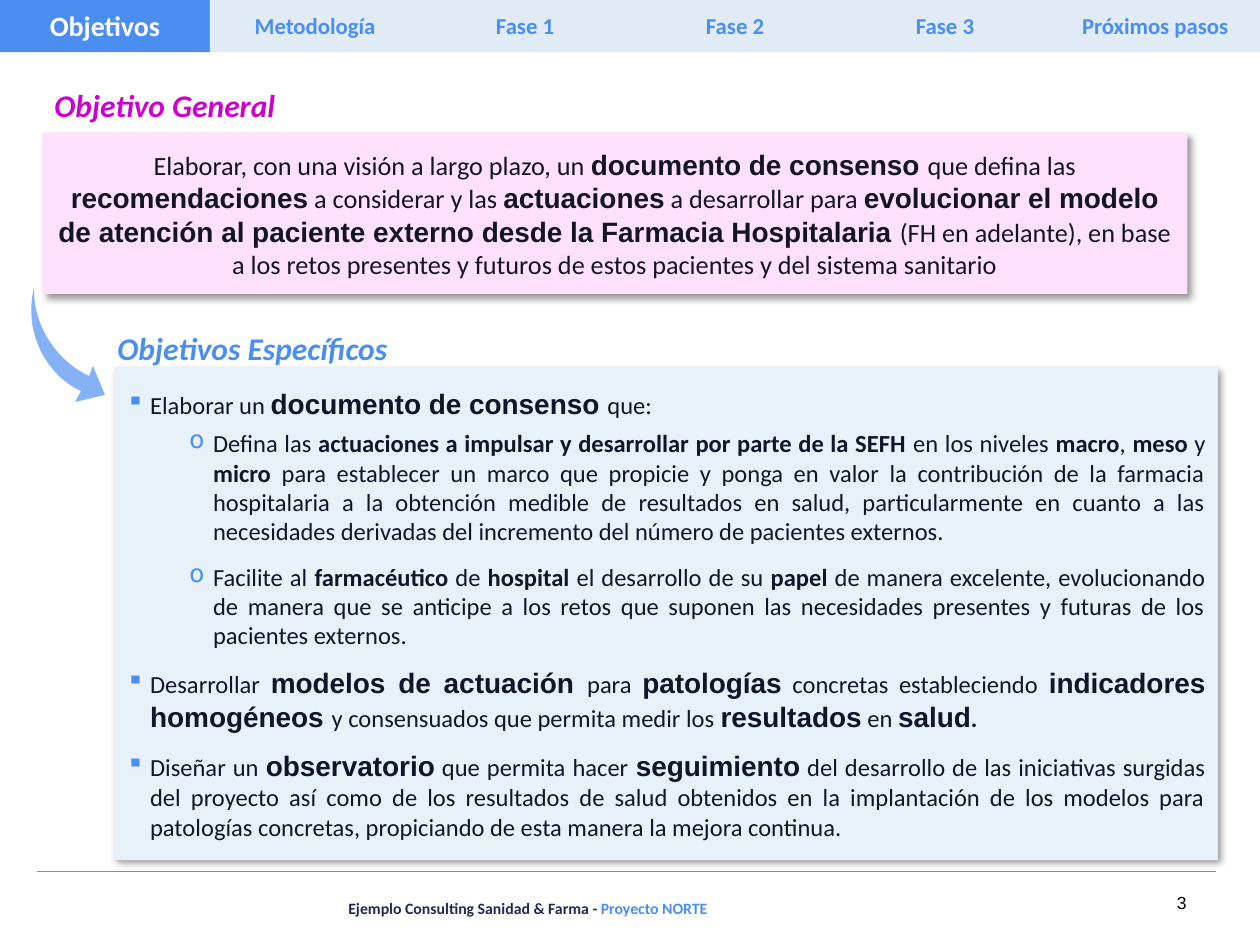
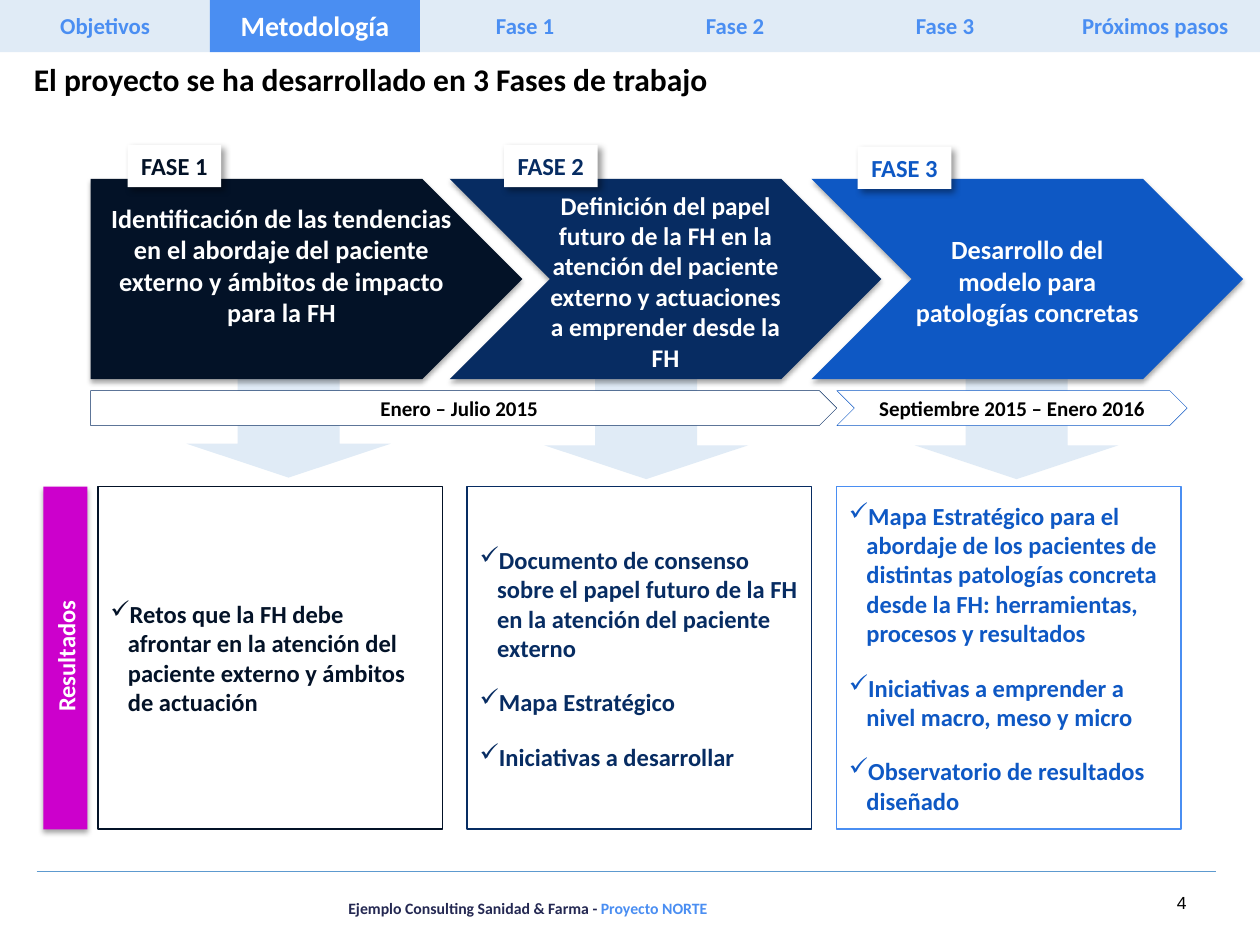
from dataclasses import dataclass

from lxml import etree
from pptx import Presentation
from pptx import util as u
from pptx.dml.color import RGBColor
from pptx.enum import shapes, text
from pptx.oxml import ns

Pt = u.Pt
Kind = shapes.MSO_SHAPE
Align = text.PP_ALIGN
Anchor = text.MSO_ANCHOR

BLUE, PALE, PINK = "4A8EF2", "E0EBF6", "CC00CC"
WHITE, BLACK, INK = "FFFFFF", "000000", "121429"
NIGHT, NAVY, ROYAL = "031227", "072C62", "0E58C4"
TABS = ("Objetivos", "Metodología", "Fase 1", "Fase 2", "Fase 3", "Próximos pasos")
INSET = (7.2, 3.6, 7.2, 3.6)


@dataclass(frozen=True)
class Shade:
    alpha: int
    blur: float
    dist: float
    angle: int


CAST = Shade(40, 4, 3, 45)
DROP = Shade(35, 3.1, 1.8, 90)


@dataclass(frozen=True)
class Para:
    text: str
    bullet: str = ""
    tint: str = ""
    left: float = 0
    hang: float = 0
    before: float = 0
    after: float = 0
    level: int = 0


@dataclass(frozen=True)
class Box:
    at: tuple[float, float, float, float]
    paras: tuple[Para, ...] = ()
    kind: Kind | None = None
    fill: str = ""
    line: str = ""
    width: float = 1
    shade: Shade | None = None
    size: float = 14
    ink: str = INK
    bold: bool = True
    italic: bool = False
    face: str = "Calibri"
    align: Align = Align.LEFT
    anchor: Anchor = Anchor.MIDDLE
    inset: tuple[float, float, float, float] = INSET
    wrap: bool = True
    turn: float = 0
    adjust: tuple[float, ...] = ()


def rgb(code: str) -> RGBColor:
    return RGBColor.from_string(code)


def node(parent, tag: str, **attrs):
    child = etree.SubElement(parent, ns.qn(tag))
    for key, value in attrs.items():
        child.set(key, str(value))
    return child


def cast(shape, shade: Shade) -> None:
    effects = shape.element.spPr.find(ns.qn("a:effectLst"))
    outer = node(effects, "a:outerShdw", blurRad=int(Pt(shade.blur)), dist=int(Pt(shade.dist)),
                 dir=shade.angle * 60000, algn="ctr", rotWithShape=0)
    color = node(outer, "a:srgbClr", val=BLACK)
    node(color, "a:alpha", val=shade.alpha * 1000)


def mark(line, para: Para) -> None:
    props = line._p.get_or_add_pPr()
    props.set("marL", str(int(Pt(para.left))))
    props.set("indent", str(int(Pt(-para.hang))))
    if para.tint:
        node(node(props, "a:buClr"), "a:srgbClr", val=para.tint)
    node(props, "a:buChar", char=para.bullet)


def write(line, para: Para, box: Box) -> None:
    if para.bullet:
        mark(line, para)
    line.level, line.alignment = para.level, box.align
    line.space_before, line.space_after = Pt(para.before), Pt(para.after)
    for part in para.text.split("|"):
        run = line.add_run()
        run.text = part.lstrip("*_")
        big, strong = part.startswith("*"), part.startswith("_")
        font = run.font
        font.name = "Arial" if big else box.face
        font.size = Pt(16 if big else box.size)
        font.bold = big or strong or box.bold
        font.italic = box.italic
        font.color.rgb = rgb(box.ink)


def paint(shape, box: Box) -> None:
    shape.shadow.inherit = False
    shape.fill.solid()
    shape.fill.fore_color.rgb = rgb(box.fill)
    if box.line:
        shape.line.color.rgb = rgb(box.line)
        shape.line.width = Pt(box.width)
    else:
        shape.line.fill.background()
    if box.shade:
        cast(shape, box.shade)


def draw(slide, box: Box):
    place = [Pt(side) for side in box.at]
    if box.kind is None:
        shape = slide.shapes.add_textbox(*place)
    else:
        shape = slide.shapes.add_shape(box.kind, *place)
        paint(shape, box)
    for index, value in enumerate(box.adjust):
        shape.adjustments[index] = value
    shape.rotation = box.turn
    frame = shape.text_frame
    frame.word_wrap = box.wrap
    frame.vertical_anchor = box.anchor
    frame.margin_left, frame.margin_top, frame.margin_right, frame.margin_bottom = map(Pt, box.inset)
    for index, para in enumerate(box.paras):
        write(frame.add_paragraph() if index else frame.paragraphs[0], para, box)
    return shape


def start(deck, active: int, number: int):
    slide = deck.slides.add_slide(deck.slide_layouts[6])
    rule = slide.shapes.add_connector(shapes.MSO_CONNECTOR.STRAIGHT, Pt(20.9), Pt(498.2), Pt(694.8), Pt(498.2))
    rule.line.color.rgb = rgb("5D9ACF")
    rule.line.width = Pt(0.75)
    node(rule._element.spPr, "a:effectLst")
    foot = draw(slide, Box((192, 510, 402, 18), (Para("Ejemplo Consulting Sanidad & Farma - |Proyecto NORTE"),),
                           size=9, ink="242852", anchor=Anchor.TOP))
    foot.text_frame.paragraphs[0].runs[1].font.color.rgb = rgb(BLUE)
    draw(slide, Box((558, 510, 120, 12), (Para(str(number)),), size=10, ink=BLACK, bold=False,
                    face="Arial", align=Align.RIGHT, anchor=Anchor.TOP, inset=(0, 0, 0, 0)))
    for index, name in enumerate(TABS):
        on = index == active
        draw(slide, Box((index * 120, -1.2, 120, 31), (Para(name),), Kind.RECTANGLE,
                        BLUE if on else PALE, size=16 if on else 13,
                        ink=WHITE if on else BLUE, align=Align.CENTER))
    return slide


def curve(a, b, c, d, steps: int = 16) -> list[tuple[float, float]]:
    def spot(t: float, axis: int) -> float:
        s = 1 - t
        return s**3 * a[axis] + 3 * s * s * t * b[axis] + 3 * s * t * t * c[axis] + t**3 * d[axis]

    return [(spot(i / steps, 0), spot(i / steps, 1)) for i in range(steps + 1)]


def swoosh(slide) -> None:
    tail = (19.4, 164.6)
    outer = curve(tail, (13, 190), (27, 215), (46.3, 223.4))
    head = [(42.9, 229.7), (60, 225.7), (53.1, 209.1)]
    inner = curve((50.9, 214.9), (34, 207), (19, 188), tail)
    points = [(Pt(x), Pt(y)) for x, y in outer + head + inner]
    path = slide.shapes.build_freeform(*points[0])
    path.add_line_segments(points[1:], close=True)
    paint(path.convert_to_shape(), Box((0, 0, 0, 0), fill="85B2F6"))


def item(words: str, before: float = 4.5, after: float = 4.5) -> Para:
    return Para(words, "▪", BLUE, 13.5, 13.5, before, after)


def sub(words: str) -> Para:
    return Para(words, "o", BLUE, 49.5, 13.5, 4.5, 4.5, 1)


def goals(deck) -> None:
    slide = start(deck, 0, 3)
    for at, name, ink in (((24, 44.6, 672, 31), "Objetivo General", PINK),
                          ((60, 185.8, 636, 26.6), "Objetivos Específicos", BLUE)):
        draw(slide, Box(at, (Para(name, after=2),), size=18, ink=ink, italic=True))
    draw(slide, Box((65.2, 210, 630.8, 281.5), (
        item("Elaborar un |*documento de consenso |que:", 0, 0),
        sub("Defina las |_actuaciones a impulsar y desarrollar por parte de la SEFH| en los niveles "
            "|_macro|, |_meso| y |_micro| para establecer un marco que propicie y ponga en valor la "
            "contribución de la farmacia hospitalaria a la obtención medible de resultados en salud, "
            "particularmente en cuanto a las necesidades derivadas del incremento del número de "
            "pacientes externos."),
        sub("Facilite al |_farmacéutico| de |_hospital| el desarrollo de su |_papel| de manera excelente, "
            "evolucionando de manera que se anticipe a los retos que suponen las necesidades presentes "
            "y futuras de los pacientes externos."),
        item("Desarrollar |*modelos de actuación |para |*patologías| concretas estableciendo "
             "|*indicadores homogéneos |y consensuados que permita medir los |*resultados| en "
             "|*salud|_."),
        item("Diseñar un |*observatorio| que permita hacer |*seguimiento| del desarrollo de las "
             "iniciativas surgidas del proyecto así como de los resultados de salud obtenidos en la "
             "implantación de los modelos para patologías concretas, propiciando de esta manera la "
             "mejora continua."),
    ), Kind.RECTANGLE, "E8F0F8", shade=CAST, bold=False, align=Align.JUSTIFY))
    swoosh(slide)
    draw(slide, Box((24, 76, 654.5, 92), (Para(
        "Elaborar, con una visión a largo plazo, un |*documento de consenso |que defina las "
        "|*recomendaciones| a considerar y las |*actuaciones| a desarrollar para |*evolucionar el "
        "modelo de atención al paciente externo desde la Farmacia Hospitalaria |(FH en adelante), en "
        "base a los retos presentes y futuros de estos pacientes y del sistema sanitario"),),
        Kind.RECTANGLE, "FFE1FF", shade=CAST, size=15, bold=False, align=Align.CENTER))


@dataclass(frozen=True)
class Phase:
    ink: str
    edge: str
    kind: Kind
    left: float
    tag: tuple[float, float]
    down: tuple[float, float]
    task: str
    size: float
    inset: tuple[float, float, float, float]
    results: tuple[str, ...]


PHASES = (
    Phase(NIGHT, NIGHT, Kind.PENTAGON, 51.8, (72.9, 82.8), (106.6, 123.1),
          "Identificación de las tendencias en el abordaje del paciente externo y ámbitos de impacto "
          "para la FH", 15, (5.8, 5.8, 5.8, 21.9),
          ("Retos que la FH debe afrontar en la atención del paciente externo y ámbitos de actuación",)),
    Phase(NAVY, NAVY, Kind.CHEVRON, 257, (288, 82.8), (311, 124),
          "Definición del papel futuro de la FH en la atención del paciente externo y actuaciones a "
          "emprender desde la FH", 14.5, (0, 5.8, 0, 3.6),
          ("Documento de consenso sobre el papel futuro de la FH en la atención del paciente externo",
           "Mapa Estratégico", "Iniciativas a desarrollar")),
    Phase(ROYAL, BLUE, Kind.CHEVRON, 463.7, (490.1, 83.8), (522.6, 124),
          "Desarrollo del modelo para patologías concretas", 15, (0, 5.8, 0, 3.6),
          ("Mapa Estratégico para el abordaje de los pacientes de distintas patologías concreta desde "
           "la FH: herramientas, procesos y resultados",
           "Iniciativas a emprender a nivel macro, meso y micro",
           "Observatorio de resultados diseñado")),
)


def method(deck) -> None:
    slide = start(deck, 1, 4)
    draw(slide, Box((19.4, 31, 700.6, 36), (Para("El proyecto se ha desarrollado en 3 Fases de trabajo"),),
                    size=18, ink=BLACK, anchor=Anchor.TOP, inset=(0, 3.6, 7.2, 3.6)))
    for index, phase in enumerate(PHASES):
        lines = tuple(Para(words, "✓", "", 10, 10, 12 if row else 0, 2.2)
                      for row, words in enumerate(phase.results))
        draw(slide, Box((56 + index * 211, 278, 196.8, 195.8), lines, Kind.RECTANGLE, WHITE,
                        phase.edge, ink=phase.ink))
        draw(slide, Box((*phase.down, 116.6, 149.8), (), Kind.DOWN_ARROW, PALE, adjust=(0.5, 0.166)))
    for index, phase in enumerate(PHASES, 1):
        draw(slide, Box((phase.left, 102.2, 246.7, 114.5), (Para(phase.task),), phase.kind, phase.ink,
                        shade=DROP, size=phase.size, ink=WHITE, align=Align.CENTER, inset=phase.inset))
        draw(slide, Box((*phase.tag, 53.5, 24.2), (Para(f"FASE {index}"),), Kind.RECTANGLE, WHITE,
                        shade=CAST, ink=phase.ink, align=Align.CENTER, anchor=Anchor.TOP, wrap=False))
    draw(slide, Box((-60.5, 363.4, 195.8, 25.2), (Para("Resultados"),), Kind.RECTANGLE, PINK,
                    shade=DROP, ink=WHITE, align=Align.CENTER, inset=(2.2, 3.6, 0, 3.6), turn=270))
    for kind, left, width, edge, dates in (
            (Kind.PENTAGON, 51.8, 426.4, NAVY, "Enero – Julio 2015"),
            (Kind.CHEVRON, 478.2, 200.2, ROYAL, "Septiembre 2015 – Enero 2016")):
        draw(slide, Box((left, 223.2, width, 20), (Para(dates),), kind, WHITE, edge, 0.25,
                        size=12, ink=BLACK, align=Align.CENTER))


def main() -> None:
    deck = Presentation()
    deck.slide_width, deck.slide_height = Pt(720), Pt(540)
    goals(deck)
    method(deck)
    deck.save("out.pptx")


if __name__ == "__main__":
    main()
